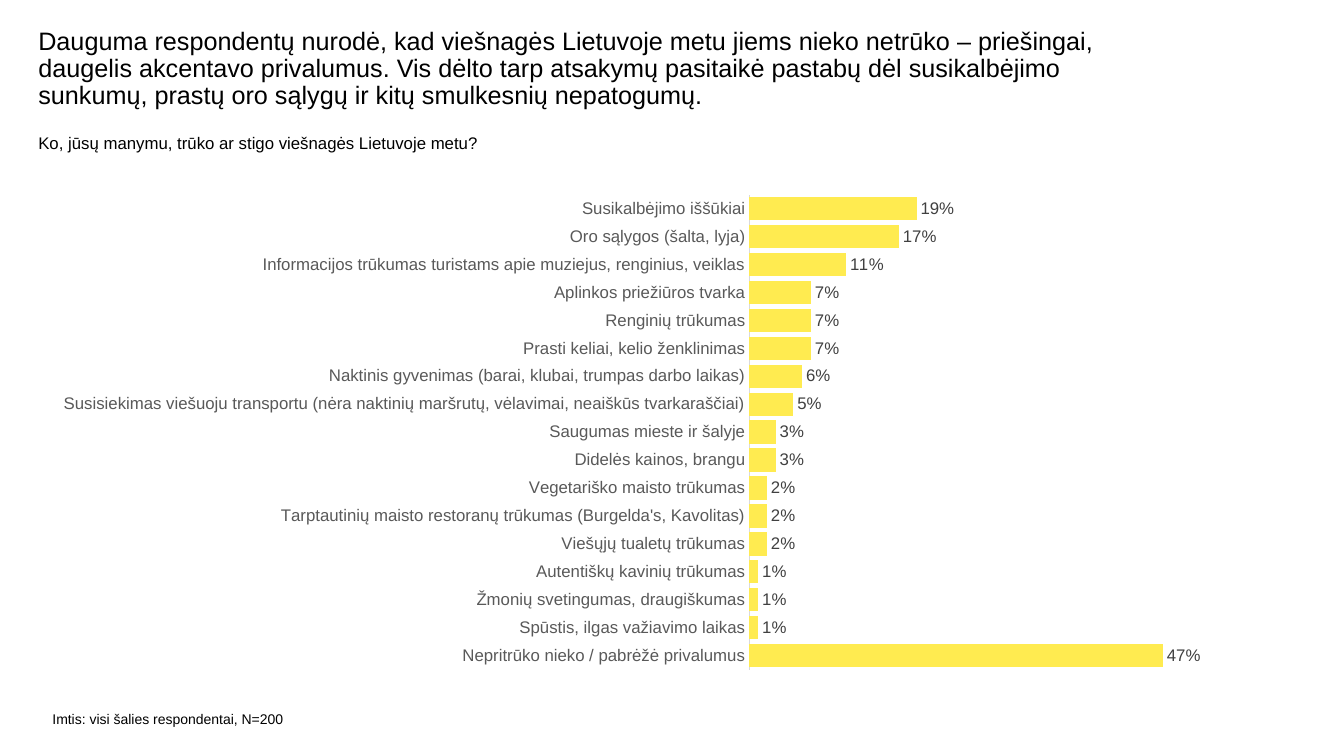
"""Build a survey slide with a bar chart of what visitors to Lithuania missed."""
import pptx
import pptx.chart.data
import pptx.dml.color
import pptx.enum.chart
import pptx.enum.text
import pptx.oxml
import pptx.oxml.ns
import pptx.util

Inches = pptx.util.Inches
Pt = pptx.util.Pt
RGBColor = pptx.dml.color.RGBColor

BLACK = RGBColor(0x00, 0x00, 0x00)
YELLOW = RGBColor(0xFF, 0xEB, 0x50)
AXIS_TEXT = RGBColor(0x59, 0x59, 0x59)
AXIS_LINE = RGBColor(0xD9, 0xD9, 0xD9)
LABEL_TEXT = RGBColor(0x40, 0x40, 0x40)

ANSWERS = [
    ("Nepritrūko nieko / pabrėžė privalumus", 0.47),
    ("Spūstis, ilgas važiavimo laikas", 0.01),
    ("Žmonių svetingumas, draugiškumas", 0.01),
    ("Autentiškų kavinių trūkumas", 0.01),
    ("Viešųjų tualetų trūkumas", 0.02),
    ("Tarptautinių maisto restoranų trūkumas (Burgelda's, Kavolitas)", 0.02),
    ("Vegetariško maisto trūkumas", 0.02),
    ("Didelės kainos, brangu", 0.03),
    ("Saugumas mieste ir šalyje", 0.03),
    ("Susisiekimas viešuoju transportu (nėra naktinių maršrutų, vėlavimai, "
     "neaiškūs tvarkaraščiai)", 0.05),
    ("Naktinis gyvenimas (barai, klubai, trumpas darbo laikas)", 0.06),
    ("Prasti keliai, kelio ženklinimas", 0.07),
    ("Renginių trūkumas", 0.07),
    ("Aplinkos priežiūros tvarka", 0.07),
    ("Informacijos trūkumas turistams apie muziejus, renginius, veiklas", 0.11),
    ("Oro sąlygos (šalta, lyja)", 0.17),
    ("Susikalbėjimo iššūkiai", 0.19),
]


class SlideBuilder:
    def __init__(self, prs):
        self.s = prs.slides.add_slide(prs.slide_layouts[5])
        self.font_name = "Arial"

    def apply(self, obj, values):
        for name, value in values.items():
            setattr(obj, name, value)

    def style_font(self, font, size, color):
        self.apply(font, {"name": self.font_name, "size": Pt(size), "bold": False})
        font.color.rgb = color

    def fill_text(self, sp, text, size, top_inset=0, line_spacing=1.0):
        tf = sp.text_frame
        self.apply(tf, {
            "word_wrap": True,
            "auto_size": pptx.enum.text.MSO_AUTO_SIZE.NONE,
            "vertical_anchor": pptx.enum.text.MSO_ANCHOR.TOP,
            "margin_left": 0, "margin_right": 0,
            "margin_top": Inches(top_inset), "margin_bottom": 0,
        })
        p = tf.paragraphs[0]
        self.apply(p, {"alignment": pptx.enum.text.PP_ALIGN.LEFT,
                       "line_spacing": line_spacing, "space_before": Pt(0)})
        r = p.add_run()
        r.text = text
        self.style_font(r.font, size, BLACK)

    def title(self, box, text, size):
        sp = self.s.shapes.title
        self.apply(sp, dict(zip(("left", "top", "width", "height"), map(Inches, box))))
        self.fill_text(sp, text, size, line_spacing=0.9)

    def text(self, box, text, size, top_inset=0):
        sp = self.s.shapes.add_textbox(*map(Inches, box))
        self.fill_text(sp, text, size, top_inset)

    def bar_chart(self, box, answers, plot_box):
        data = pptx.chart.data.CategoryChartData(number_format="0%")
        data.categories = [name for name, share in answers]
        data.add_series("Series 1", [share for name, share in answers])
        chart = self.s.shapes.add_chart(
            pptx.enum.chart.XL_CHART_TYPE.BAR_CLUSTERED, *map(Inches, box), data).chart
        self.apply(chart, {"has_legend": False, "has_title": False})
        self.style_font(chart.font, 10, BLACK)

        axis = chart.category_axis
        no_tick = pptx.enum.chart.XL_TICK_MARK.NONE
        self.apply(axis, {"major_tick_mark": no_tick, "minor_tick_mark": no_tick,
                          "has_major_gridlines": False})
        self.style_font(axis.tick_labels.font, 12, AXIS_TEXT)
        axis.format.line.color.rgb = AXIS_LINE
        axis.format.line.width = Pt(0.75)
        self.apply(chart.value_axis, {"visible": False, "has_major_gridlines": False,
                                      "minimum_scale": 0, "maximum_scale": 0.5})

        plot = chart.plots[0]
        self.apply(plot, {"gap_width": 20, "vary_by_categories": False,
                          "has_data_labels": True})
        fill = plot.series[0].format.fill
        fill.solid()
        fill.fore_color.rgb = YELLOW
        labels = plot.data_labels
        self.apply(labels, {
            "show_value": True, "number_format": "0%", "number_format_is_linked": False,
            "position": pptx.enum.chart.XL_LABEL_POSITION.OUTSIDE_END,
        })
        self.style_font(labels.font, 12, LABEL_TEXT)
        self.place_plot(chart, plot_box)

    def place_plot(self, chart, plot_box):
        qn = pptx.oxml.ns.qn
        area = chart.element.find(".//" + qn("c:plotArea"))
        for old in area.findall(qn("c:layout")):
            area.remove(old)
        modes = '<c:xMode val="edge"/><c:yMode val="edge"/>'
        sizes = "".join(f'<c:{k} val="{v}"/>' for k, v in zip("xywh", plot_box))
        area.insert(0, pptx.oxml.parse_xml(
            f'<c:layout {pptx.oxml.ns.nsdecls("c")}><c:manualLayout>'
            f'<c:layoutTarget val="inner"/>{modes}{sizes}</c:manualLayout></c:layout>'))


def main():
    prs = pptx.Presentation()
    prs.slide_width, prs.slide_height = Inches(13.33), Inches(7.5)
    b = SlideBuilder(prs)
    b.title((0.38, 0.28, 11.25, 0.6),
            "Dauguma respondentų nurodė, kad viešnagės Lietuvoje metu jiems nieko netrūko – "
            "priešingai, daugelis akcentavo privalumus. Vis dėlto tarp atsakymų pasitaikė "
            "pastabų dėl susikalbėjimo sunkumų, prastų oro sąlygų ir kitų smulkesnių "
            "nepatogumų.", 18)
    b.text((0.38, 1.32, 11.89, 0.61),
           "Ko, jūsų manymu, trūko ar stigo viešnagės Lietuvoje metu?", 12)
    b.text((0.52, 6.89, 3.86, 0.44), "Imtis: visi šalies respondentai, N=200", 10,
           top_inset=0.16)
    b.bar_chart((0.26, 1.78, 14.79, 5.02), ANSWERS, (0.485, 0.03, 0.295, 0.939))
    prs.save("out.pptx")


if __name__ == "__main__":
    main()
